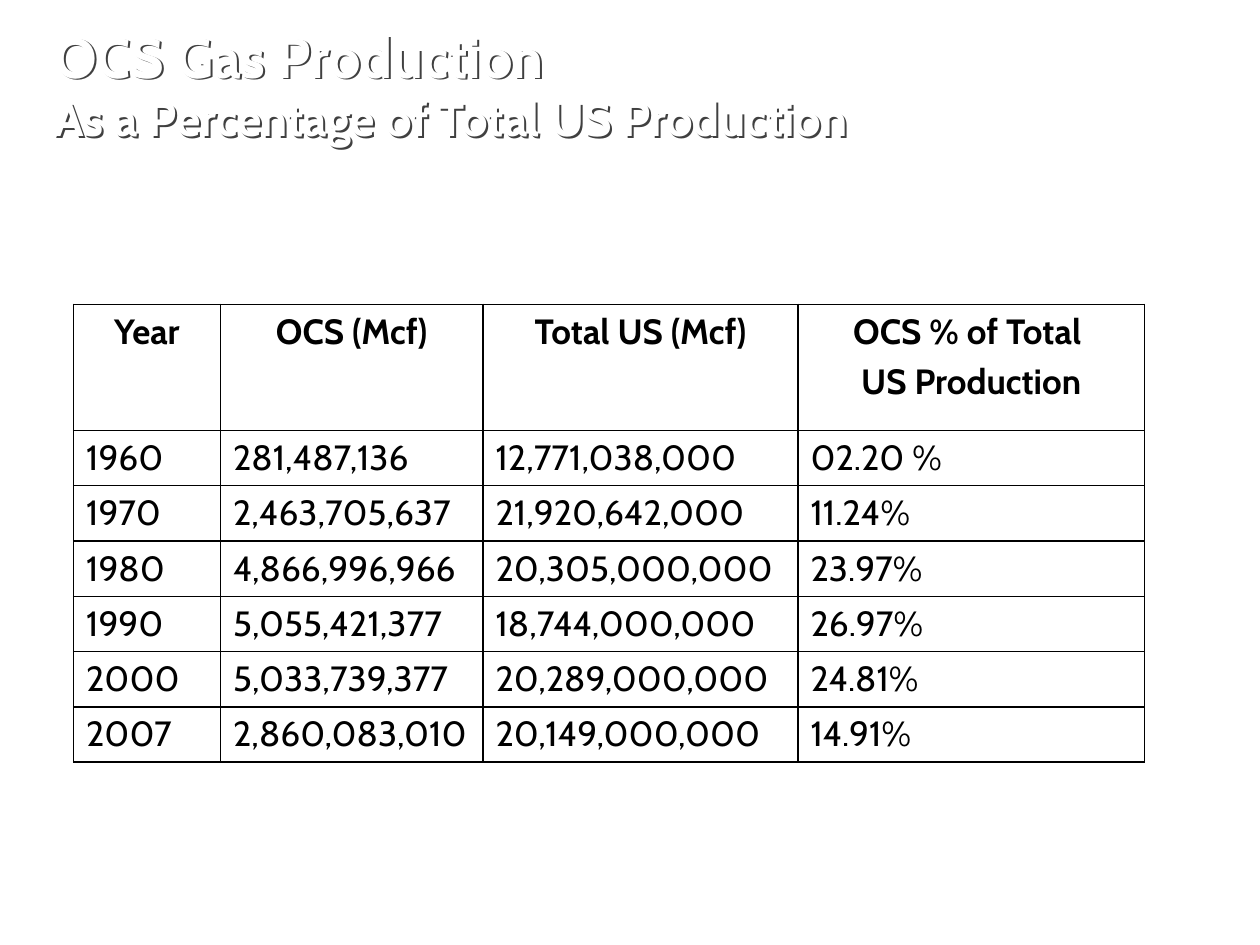
from dataclasses import dataclass

from lxml import etree
from pptx import Presentation
from pptx.dml.color import RGBColor
from pptx.enum import text
from pptx.oxml import ns
from pptx.util import Pt


@dataclass(frozen=True)
class Theme:
    face: str = "Cabin"
    white: str = "FFFFFF"
    black: str = "000000"
    shade: str = "404040"
    head: int = 32
    sub: int = 27
    body: int = 20
    rule: int = 1
    drop: float = 1.6


THEME = Theme()
ROWS = [
    ("Year", "OCS (Mcf)", "Total US (Mcf)", "OCS % of Total \nUS Production"),
    ("1960", "281,487,136", "12,771,038,000", "02.20 %"),
    ("1970", "2,463,705,637", "21,920,642,000", "11.24%"),
    ("1980", "4,866,996,966", "20,305,000,000", "23.97%"),
    ("1990", "5,055,421,377", "18,744,000,000", "26.97%"),
    ("2000", "5,033,739,377", "20,289,000,000", "24.81%"),
    ("2007", "2,860,083,010", "20,149,000,000", "14.91%"),
]
WIDTHS = (84, 150, 180, 198)
TOP, STEP = 72, 31.6


def style(font, size, color, bold):
    font.name = THEME.face
    font.size = Pt(size)
    font.bold = bold
    font.color.rgb = RGBColor.from_string(color)


def shade(box):
    """Let the letters of an unfilled box cast a shadow."""
    box.fill.background()
    box._element.spPr.append(etree.fromstring(
        f'<a:effectLst {ns.nsdecls("a")}>'
        f'<a:outerShdw blurRad="0" dist="{Pt(THEME.drop)}" dir="2700000" '
        'algn="tl" rotWithShape="0">'
        f'<a:srgbClr val="{THEME.shade}"/></a:outerShdw></a:effectLst>'))


def border(cell):
    props = cell._tc.get_or_add_tcPr()
    for place, side in enumerate("LRTB"):
        props.insert(place, etree.fromstring(
            f'<a:ln{side} {ns.nsdecls("a")} w="{Pt(THEME.rule)}">'
            f'<a:solidFill><a:srgbClr val="{THEME.black}"/></a:solidFill>'
            f'</a:ln{side}>'))


def title(slide, left, top, width, height):
    box = slide.shapes.add_textbox(
        Pt(left), Pt(top), Pt(width), Pt(height))
    shade(box)
    frame = box.text_frame
    frame.word_wrap = True
    frame.vertical_anchor = text.MSO_ANCHOR.MIDDLE
    para = frame.paragraphs[0]
    lines = (("OCS Gas Production", THEME.head),
             ("As a Percentage of Total US Production", THEME.sub))
    for place, (words, size) in enumerate(lines):
        if place:
            para.add_line_break()
        run = para.add_run()
        run.text = words
        style(run.font, size, THEME.white, True)


def fill(cell, words, head):
    cell.fill.background()
    border(cell)
    cell.text = words
    for place, para in enumerate(cell.text_frame.paragraphs):
        if head:
            para.alignment = text.PP_ALIGN.CENTER
        if place:
            para.space_before = Pt(4)
        style(para.font, THEME.body, THEME.black, head)


def grid(slide, left, top):
    high = TOP + STEP * (len(ROWS) - 1)
    table = slide.shapes.add_table(
        len(ROWS), len(WIDTHS), Pt(left), Pt(top),
        Pt(sum(WIDTHS)), Pt(high)).table
    table.horz_banding = False
    table.first_row = False
    for col, width in zip(table.columns, WIDTHS):
        col.width = Pt(width)
    for place, (row, data) in enumerate(zip(table.rows, ROWS)):
        row.height = Pt(STEP if place else TOP)
        for cell, words in zip(row.cells, data):
            fill(cell, words, place == 0)


def main():
    deck = Presentation()
    deck.slide_width, deck.slide_height = Pt(720), Pt(540)
    slide = deck.slides.add_slide(deck.slide_layouts[6])
    title(slide, 24, 0, 600, 96)
    grid(slide, 42, 174)
    deck.save("out.pptx")


if __name__ == "__main__":
    main()
